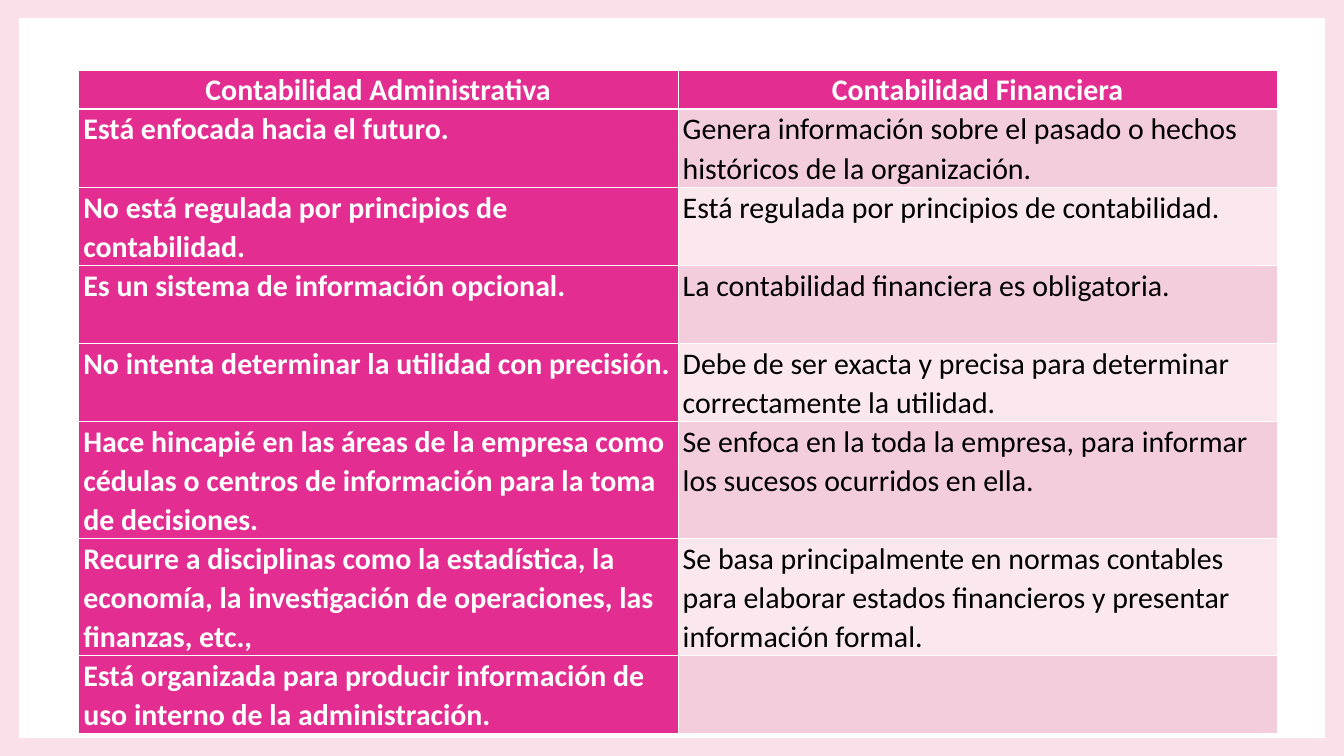
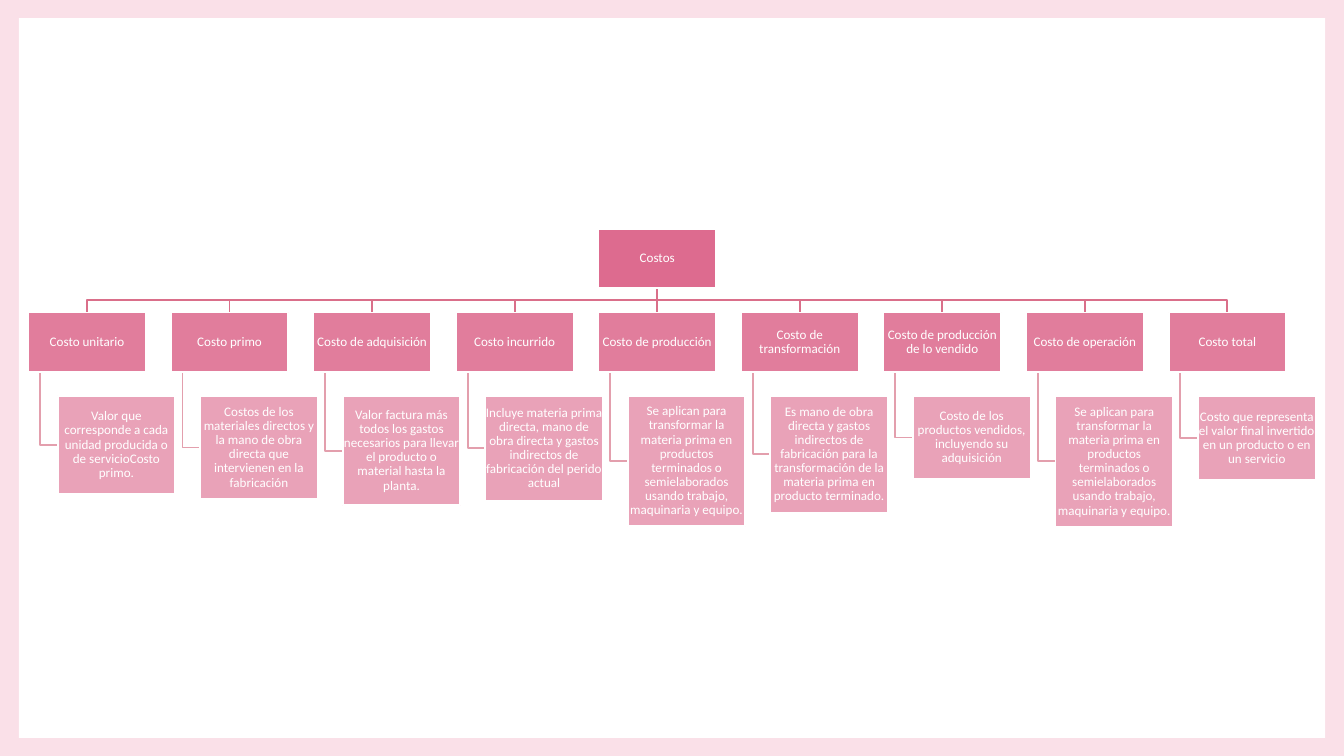
from lxml import etree
from pptx import Presentation
from pptx.dml.color import RGBColor
from pptx.enum.shapes import MSO_CONNECTOR, MSO_SHAPE
from pptx.enum.text import MSO_ANCHOR, PP_ALIGN
from pptx.oxml.ns import qn
from pptx.util import Inches, Pt

RECTANGLE = MSO_SHAPE.RECTANGLE
STRAIGHT = MSO_CONNECTOR.STRAIGHT
CENTER, LEFT = PP_ALIGN.CENTER, PP_ALIGN.LEFT
MIDDLE = MSO_ANCHOR.MIDDLE

FONT = "Calibri"
COLORS = {
    "border": "FAE0E8", "white": "FFFFFF", "black": "000000",
    "magenta": "E32D91", "band_dark": "F4CDDC", "band_light": "FAE8EE",
    "box": "D54773", "branch": "DA6F8A", "twig": "E39FAD",
}

# Content: comparison of the two kinds of accounting
HEADINGS = ("Contabilidad Administrativa", "Contabilidad Financiera")
COMPARISON = [  # row height, administrative, financial
    (1.11, "Está enfocada hacia el futuro.",
     "Genera información sobre el pasado o hechos históricos de la organización."),
    (1.11, "No está regulada por principios de contabilidad.",
     "Está regulada por principios de contabilidad."),
    (1.16, "Es un sistema de información opcional.",
     "La contabilidad financiera es obligatoria."),
    (1.11, "No intenta determinar la utilidad con precisión.",
     "Debe de ser exacta y precisa para determinar correctamente la utilidad."),
    (1.68, "Hace hincapié en las áreas de la empresa como cédulas o centros de "
     "información para la toma de decisiones.",
     "Se enfoca en la toda la empresa, para informar los sucesos ocurridos en ella."),
    (1.68, "Recurre a disciplinas como la estadística, la economía, la investigación "
     "de operaciones, las finanzas, etc.,",
     "Se basa principalmente en normas contables para elaborar estados financieros "
     "y presentar información formal."),
    (1.11, "Está organizada para producir información de uso interno de la "
     "administración.", ""),
]

# Content: tree of costs
ROOT = "Costos"
PROCESSING = ("Se aplican para transformar la materia prima en productos terminados o "
              "semielaborados usando trabajo, maquinaria y equipo.")
COSTS = [  # cost, meaning, height of the meaning box
    ("Costo unitario", "Valor que corresponde a cada unidad producida o de "
     "servicioCosto primo.", 1.46),
    ("Costo primo", "Costos de los materiales directos y la mano de obra directa que "
     "intervienen en la fabricación", 1.54),
    ("Costo de adquisición", "Valor factura más todos los gastos necesarios para "
     "llevar el producto o material hasta la planta.", 1.63),
    ("Costo incurrido", "Incluye materia prima directa, mano de obra directa y gastos "
     "indirectos de fabricación del perido actual", 1.56),
    ("Costo de producción", PROCESSING, 1.94),
    ("Costo de transformación", "Es mano de obra directa y gastos indirectos de "
     "fabricación para la transformación de la materia prima en producto terminado.", 1.74),
    ("Costo de producción de lo vendido", "Costo de los productos vendidos, incluyendo "
     "su adquisición", 1.24),
    ("Costo de operación", PROCESSING, 1.95),
    ("Costo total", "Costo que representa el valor final invertido en un producto o en "
     "un servicio", 1.26),
]

# Tree measures
FIRST_LEFT, LAST_LEFT = 0.42, 17.39
BOX_W, BOX_H = 1.75, 0.88
ROOT_TOP, COST_TOP, MEANING_TOP = 3.41, 4.65, 5.89
MEANING_INDENT = BOX_W / 4
TWIG_INDENT = BOX_W / 10


def rgb(name):
    return RGBColor.from_string(COLORS[name])


def style_text(paragraph, text, size, color, bold=False, align=CENTER, spacing=0.9):
    paragraph.text = text
    paragraph.alignment = align
    paragraph.line_spacing = spacing
    font = paragraph.font
    font.name, font.size, font.bold = FONT, Pt(size), bold
    font.color.rgb = rgb(color)


def add_rectangle(slide, left, top, width, height, color):
    rectangle = slide.shapes.add_shape(
        RECTANGLE, Inches(left), Inches(top), Inches(width), Inches(height))
    rectangle.shadow.inherit = False
    rectangle.fill.solid()
    rectangle.fill.fore_color.rgb = rgb(color)
    rectangle.line.fill.background()
    return rectangle


def add_framed_slide(prs):
    slide = prs.slides.add_slide(prs.slide_layouts[6])
    slide.background.fill.solid()
    slide.background.fill.fore_color.rgb = rgb("border")
    add_rectangle(slide, 0.28, 0.27, 19.44, 10.71, "white")
    return slide


# Comparison table
def set_borders(cell, bottom=1, top=1):
    properties = cell._tc.get_or_add_tcPr()
    sides = (("a:lnL", 1), ("a:lnR", 1), ("a:lnT", top), ("a:lnB", bottom))
    for position, (tag, width) in enumerate(sides):
        line = etree.Element(qn(tag), w=str(Pt(width)))
        fill = etree.SubElement(line, qn("a:solidFill"))
        etree.SubElement(fill, qn("a:srgbClr"), val=COLORS["white"])
        properties.insert(position, line)


def fill_cell(cell, text, background, color, bold, align):
    cell.margin_left = cell.margin_right = Inches(0.07)
    cell.margin_top = cell.margin_bottom = 0
    cell.fill.solid()
    cell.fill.fore_color.rgb = rgb(background)
    paragraph = cell.text_frame.paragraphs[0]
    style_text(paragraph, text, 32, color, bold, align, 1.07)
    paragraph.space_after = Pt(8)


def build_comparison(prs):
    slide = add_framed_slide(prs)
    rows = [(0.55, *HEADINGS)] + COMPARISON
    heights = [row[0] for row in rows]
    table = slide.shapes.add_table(
        len(rows), len(HEADINGS), Inches(1.17), Inches(1.04),
        Inches(17.84), Inches(sum(heights))).table
    for column in table.columns:
        column.width = Inches(8.92)
    for r, (height, *texts) in enumerate(rows):
        table.rows[r].height = Inches(height)
        for c, text in enumerate(texts):
            cell = table.cell(r, c)
            if r == 0 or c == 0:
                background, color, bold = "magenta", "white", True
            else:
                background = "band_dark" if r % 2 else "band_light"
                color, bold = "black", False
            fill_cell(cell, text, background, color, bold, LEFT if r else CENTER)
            set_borders(cell, bottom=1 if r else 3, top=3 if r == 1 else 1)


# Cost tree
def add_box(slide, text, left, top, height, opacity):
    box = add_rectangle(slide, left, top, BOX_W, height, "box")
    shade = box.fill._xPr.find(qn("a:solidFill"))[0]
    etree.SubElement(shade, qn("a:alpha"), val=str(opacity * 1000))
    box.line.color.rgb = rgb("white")
    box.line.width = Pt(2)
    frame = box.text_frame
    frame.word_wrap = True
    frame.vertical_anchor = MIDDLE
    frame.margin_left = frame.margin_right = Inches(0.01)
    frame.margin_top = frame.margin_bottom = Inches(0.01)
    style_text(frame.paragraphs[0], text, 14, "white")
    return box


def add_elbow(slide, points, color):
    start, *rest = [(Inches(x), Inches(y)) for x, y in points]
    builder = slide.shapes.build_freeform(*start)
    builder.add_line_segments(rest, close=False)
    elbow = builder.convert_to_shape()
    elbow.shadow.inherit = False
    elbow.fill.background()
    elbow.line.color.rgb = rgb(color)
    elbow.line.width = Pt(2)


def add_trunk(slide, x, top, bottom):
    trunk = slide.shapes.add_connector(
        STRAIGHT, Inches(x), Inches(top), Inches(x), Inches(bottom))
    trunk.line.color.rgb = rgb("branch")
    trunk.line.width = Pt(2)
    etree.SubElement(trunk._element.spPr, qn("a:effectLst"))
    return trunk


def build_tree(prs):
    slide = add_framed_slide(prs)
    pitch = (LAST_LEFT - FIRST_LEFT) / (len(COSTS) - 1)
    lefts = [FIRST_LEFT + i * pitch for i in range(len(COSTS))]
    middle = len(COSTS) // 2
    root_x = lefts[middle] + BOX_W / 2
    root_bottom = ROOT_TOP + BOX_H
    bus_y = (root_bottom + COST_TOP) / 2

    # Lines lie behind the boxes
    for i, (left, (_, _, height)) in enumerate(zip(lefts, COSTS)):
        twig_x, twig_y = left + TWIG_INDENT, MEANING_TOP + height / 2
        add_elbow(slide, [(twig_x, COST_TOP + BOX_H), (twig_x, twig_y),
                          (left + MEANING_INDENT, twig_y)], "twig")
        if i != middle:
            cost_x = left + BOX_W / 2
            add_elbow(slide, [(root_x, root_bottom), (root_x, bus_y),
                              (cost_x, bus_y), (cost_x, COST_TOP)], "branch")
    trunk = add_trunk(slide, root_x, root_bottom, COST_TOP)

    # Boxes
    root = add_box(slide, ROOT, lefts[middle], ROOT_TOP, BOX_H, 80)
    cost_boxes = []
    for left, (cost, meaning, height) in zip(lefts, COSTS):
        cost_boxes.append(add_box(slide, cost, left, COST_TOP, BOX_H, 70))
        add_box(slide, meaning, left + MEANING_INDENT, MEANING_TOP, height, 50)
    trunk.begin_connect(root, 2)
    trunk.end_connect(cost_boxes[middle], 0)


def main():
    prs = Presentation()
    prs.slide_width, prs.slide_height = Inches(20), Inches(11.25)
    build_comparison(prs)
    build_tree(prs)
    prs.save("out.pptx")


if __name__ == "__main__":
    main()
